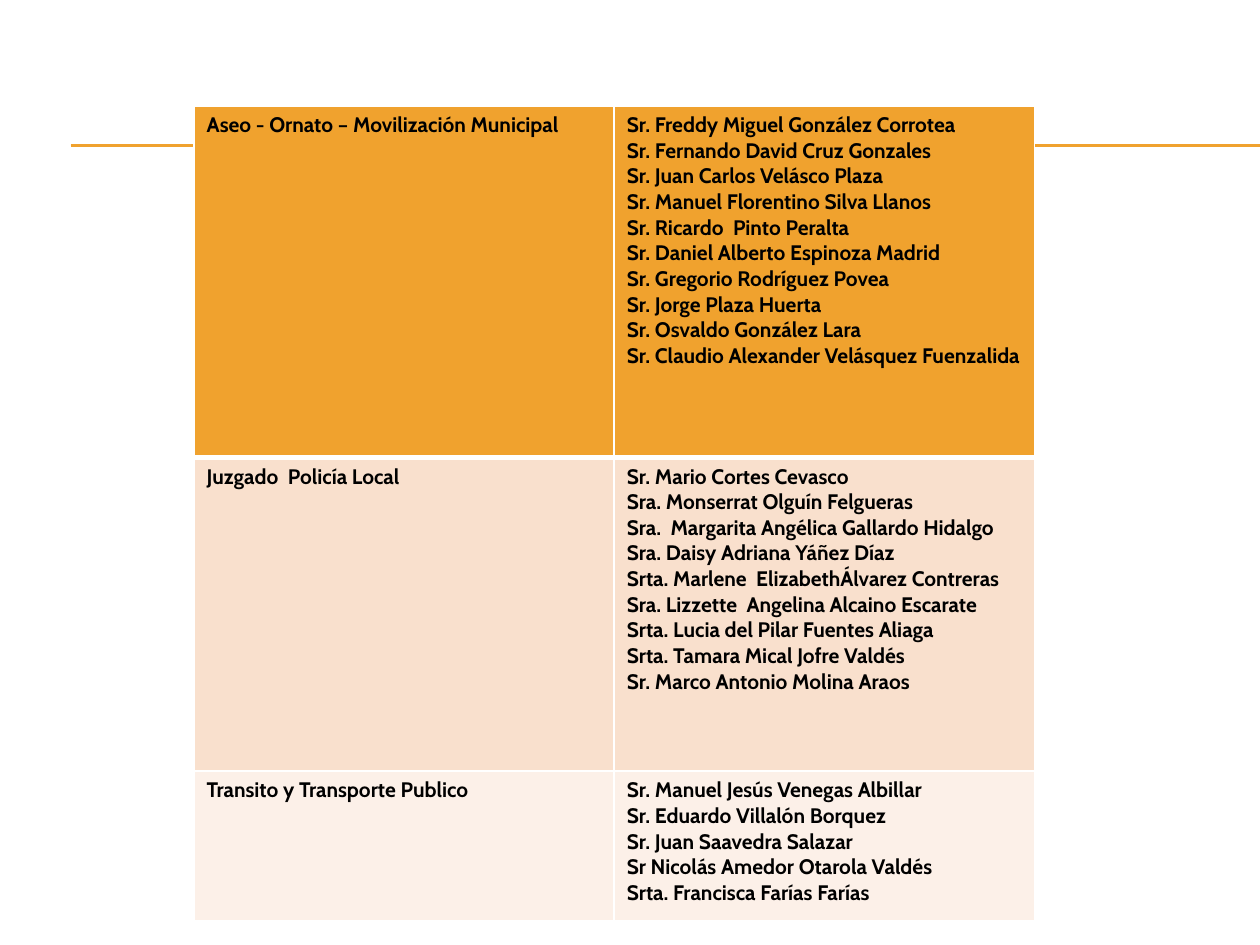
from lxml import etree
from pptx import Presentation
from pptx.dml.color import RGBColor
from pptx.enum.shapes import MSO_CONNECTOR
from pptx.oxml.ns import qn
from pptx.util import Inches, Pt

STRAIGHT = MSO_CONNECTOR.STRAIGHT
COLORS = {
    "orange": "F0A22E",
    "peach": "F9E0CD",
    "cream": "FCF0E8",
    "border": "FFFFFF",
    "text": "000000",
}

DEPARTMENTS = [
    ("Aseo - Ornato – Movilización Municipal", "orange", 2.79, [
        "Sr. Freddy Miguel González Corrotea",
        "Sr. Fernando David Cruz Gonzales",
        "Sr. Juan Carlos Velásco Plaza",
        "Sr. Manuel Florentino Silva Llanos",
        "Sr. Ricardo  Pinto Peralta",
        "Sr. Daniel Alberto Espinoza Madrid",
        "Sr. Gregorio Rodríguez Povea",
        "Sr. Jorge Plaza Huerta",
        "Sr. Osvaldo González Lara",
        "Sr. Claudio Alexander Velásquez Fuenzalida",
    ]),
    ("Juzgado  Policía Local", "peach", 2.49, [
        "Sr. Mario Cortes Cevasco",
        "Sra. Monserrat Olguín Felgueras",
        "Sra.  Margarita Angélica Gallardo Hidalgo",
        "Sra. Daisy Adriana Yáñez Díaz",
        "Srta. Marlene  ElizabethÁlvarez Contreras",
        "Sra. Lizzette  Angelina Alcaino Escarate",
        "Srta. Lucia del Pilar Fuentes Aliaga",
        "Srta. Tamara Mical Jofre Valdés",
        "Sr. Marco Antonio Molina Araos",
    ]),
    ("Transito y Transporte Publico", "cream", 1.19, [
        "Sr. Manuel Jesús Venegas Albillar",
        "Sr. Eduardo Villalón Borquez",
        "Sr. Juan Saavedra Salazar",
        "Sr Nicolás Amedor Otarola Valdés",
        "Srta. Francisca Farías Farías",
    ]),
]


def write_lines(frame, text, font="Cabin", size=12, bold=True, color="text"):
    for index, line in enumerate(text):
        para = frame.paragraphs[0] if index == 0 else frame.add_paragraph()
        span = para.add_run()
        span.text = line
        span.font.name = font
        span.font.size = Pt(size)
        span.font.bold = bold
        span.font.color.rgb = RGBColor.from_string(COLORS[color])


def set_border(cell, side, width):
    properties = cell._tc.get_or_add_tcPr()
    line = etree.SubElement(properties, qn(f"a:ln{side}"), w=str(Pt(width)))
    fill = etree.SubElement(line, qn("a:solidFill"))
    etree.SubElement(fill, qn("a:srgbClr"), val=COLORS["border"])


deck = Presentation()
deck.slide_width = Inches(10)
deck.slide_height = Inches(7.5)
page = deck.slides.add_slide(deck.slide_layouts[6])

for height in (1.15, 1.16):
    rule = page.shapes.add_connector(
        STRAIGHT, Inches(0.56), Inches(height), Inches(10), Inches(height))
    rule.line.color.rgb = RGBColor.from_string(COLORS["orange"])
    rule.line.width = Pt(0.75)
    etree.SubElement(rule._element.spPr, qn("a:effectLst"))

table = page.shapes.add_table(
    len(DEPARTMENTS), 2, Inches(1.54), Inches(0.84), Inches(6.67), Inches(6.47)).table

for row, (department, color, height, people) in enumerate(DEPARTMENTS):
    table.rows[row].height = Inches(height)
    for column, lines in enumerate(([department], people)):
        cell = table.cell(row, column)
        write_lines(cell.text_frame, lines)
        set_border(cell, "L", 1)
        set_border(cell, "R", 1)
        set_border(cell, "T", 3 if row == 1 else 1)
        set_border(cell, "B", 3 if row == 0 else 1)
        cell.fill.solid()
        cell.fill.fore_color.rgb = RGBColor.from_string(COLORS[color])

deck.save("out.pptx")
